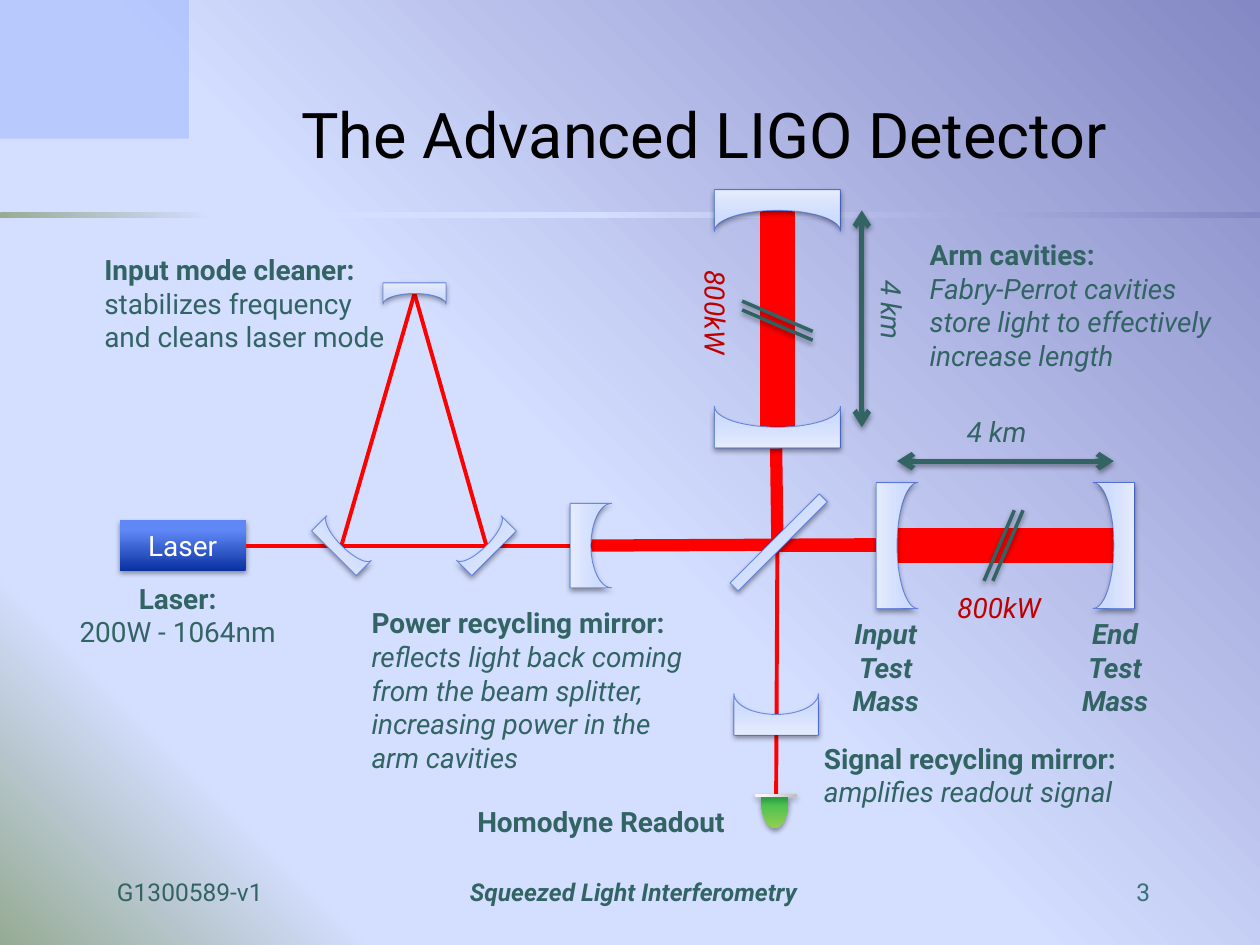
from dataclasses import dataclass
from math import cos, pi, sin

from lxml import etree
from pptx import Presentation
from pptx.dml.color import RGBColor
from pptx.enum.shapes import MSO_CONNECTOR, MSO_SHAPE
from pptx.enum.text import MSO_ANCHOR, MSO_AUTO_SIZE, PP_ALIGN
from pptx.oxml.ns import qn
from pptx.util import Inches, Pt

STRAIGHT = MSO_CONNECTOR.STRAIGHT
RECTANGLE, PIE = MSO_SHAPE.RECTANGLE, MSO_SHAPE.PIE
LEFT, CENTER = PP_ALIGN.LEFT, PP_ALIGN.CENTER
MIDDLE, BOTTOM = MSO_ANCHOR.MIDDLE, MSO_ANCHOR.BOTTOM
NO_AUTOFIT = MSO_AUTO_SIZE.NONE

COLUMNS, ROWS = 10, 7.5
CELL = Inches(1)
CAVITY = 1.72


@dataclass(frozen=True)
class Theme:
    font: str = "Roboto"
    title_size: float = 36
    body_size: float = 16
    footer_size: float = 14
    ink: str = "326464"
    number: str = "377373"
    black: str = "000000"
    white: str = "FFFFFF"
    power: str = "C00000"
    beam: str = "FF0000"
    corner: str = "7095FD"
    edge: str = "0337C6"
    backdrop: tuple = ((0, "8488C4"), (53, "D4DEFF"), (83, "D4DEFF"), (100, "96AB94"))
    glass: tuple = ((0, "CFDCFE"), (35, "CFDCFE"), (100, "E4EBFC"))
    laser: tuple = ((0, "0A31A1"), (80, "5F87F5"), (100, "5F87F5"))
    diode: tuple = ((0, "92D050"), (80, "00B050"), (100, "F8F8F8"))
    plate: tuple = ((0, "BEBEBE"), (80, "F7F7F7"), (100, "F8F8F8"))


THEME = Theme()


@dataclass(frozen=True)
class Box:
    left: float
    top: float
    width: float
    height: float

    def point(self, x, y):
        return self.left + x, self.top + y

    def area(self, x, y, width, height):
        return Box(self.left + x, self.top + y, width, height)

    def emu(self):
        return [round(v * CELL) for v in (self.left, self.top, self.width, self.height)]


def centered(point, width, height):
    return Box(point[0] - width / 2, point[1] - height / 2, width, height)


def child(parent, tag, **attributes):
    return etree.SubElement(parent, qn(tag), {k: str(v) for k, v in attributes.items()})


def set_alpha(element, percent):
    child(element.find(".//" + qn("a:srgbClr")), "a:alpha", val=percent * 1000)


def gradient(owner, fill, stops, angle=None):
    fill.gradient()
    grad = owner.find(".//" + qn("a:gradFill"))
    grad.clear()
    grad.set("rotWithShape", "1")
    stop_list = child(grad, "a:gsLst")
    for position, color in stops:
        child(child(stop_list, "a:gs", pos=position * 1000), "a:srgbClr", val=color)
    if angle is None:
        child(child(grad, "a:path", path="circle"), "a:fillToRect", l=100000, b=100000)
    else:
        child(grad, "a:lin", ang=angle * 60000, scaled=0)


def cast_shadow(effects, alpha=38, distance=1.6):
    shade = child(effects, "a:outerShdw", blurRad=Pt(3.1), dist=Pt(distance),
                  dir=90 * 60000, rotWithShape=0)
    child(child(shade, "a:srgbClr", val=THEME.black), "a:alpha", val=alpha * 1000)


def finish(shape, stops, angle=270, rotation=0, outlined=False, shadowed=True):
    gradient(shape._element, shape.fill, stops, angle)
    shape.rotation = rotation
    shape.shadow.inherit = False
    if shadowed:
        cast_shadow(shape._element.spPr.find(qn("a:effectLst")))
    if outlined:
        shape.line.color.rgb = RGBColor.from_string(THEME.edge)
        shape.line.width = Pt(0.5)
        set_alpha(shape._element.spPr.find(qn("a:ln")), 50)
    else:
        shape.line.fill.background()
    return shape


def block(page, box, stops, kind=RECTANGLE, **look):
    return finish(page.shapes.add_shape(kind, *box.emu()), stops, **look)


def mirror(page, vertex, width, height, rotation=0):
    box = centered(vertex, width, height)
    arc = [(0.5 - cos(pi * i / 24) / 2, 1 - sin(pi * i / 24) / 2) for i in range(25)]
    outline = [(round((box.left + x * width) * CELL), round((box.top + y * height) * CELL))
               for x, y in [(0, 0), *arc, (1, 0)]]
    builder = page.shapes.build_freeform(*outline[0])
    builder.add_line_segments(outline[1:], close=True)
    return finish(builder.convert_to_shape(), THEME.glass, rotation=rotation, outlined=True)


def line(page, start, end, width, color=THEME.beam, arrows=False, shadowed=False):
    ends = [round(v * CELL) for v in (*start, *end)]
    connector = page.shapes.add_connector(STRAIGHT, *ends)
    connector.line.color.rgb = RGBColor.from_string(color)
    connector.line.width = Pt(width)
    properties = connector._element.spPr
    if arrows:
        for tag in ("a:headEnd", "a:tailEnd"):
            child(properties.find(qn("a:ln")), tag, type="arrow")
    effects = child(properties, "a:effectLst")
    if shadowed:
        cast_shadow(effects)
    return connector


def style(span, size=THEME.body_size, color=THEME.ink, bold=False, italic=False):
    span.font.name, span.font.size = THEME.font, Pt(size)
    span.font.color.rgb = RGBColor.from_string(color)
    span.font.bold, span.font.italic = bold, italic


def label(page, box, paragraphs, align=LEFT, wrap=True, rotation=0, **look):
    shape = page.shapes.add_textbox(*box.emu())
    shape.rotation = rotation
    frame = shape.text_frame
    frame.word_wrap, frame.vertical_anchor = wrap, MIDDLE
    for index, spans in enumerate(paragraphs):
        para = frame.add_paragraph() if index else frame.paragraphs[0]
        para.alignment = align
        for text, emphasis in spans:
            span = para.add_run()
            span.text = text
            style(span, bold="b" in emphasis, italic="i" in emphasis, **look)
    return shape


def header(page, box):
    stripe = box.area(0, 1.69, box.width, 0.04)
    block(page, stripe, THEME.backdrop, angle=None, shadowed=False)
    corner = page.shapes.add_shape(RECTANGLE, *box.area(0, 0, 1.5, 1.1).emu())
    corner.fill.solid()
    corner.fill.fore_color.rgb = RGBColor.from_string(THEME.corner)
    set_alpha(corner._element.spPr, 28)
    corner.line.fill.background()
    corner.shadow.inherit = False
    title = page.shapes.title
    title.left, title.top, title.width, title.height = box.area(1.84, 0.57, 7.5, 0.84).emu()
    frame = title.text_frame
    frame.text = "The Advanced LIGO Detector"
    frame.vertical_anchor, frame.auto_size = BOTTOM, NO_AUTOFIT
    frame.paragraphs[0].alignment = CENTER
    style(frame.paragraphs[0].runs[0], THEME.title_size, THEME.black)


def footer(page, box):
    shape = label(page, box, [[("G1300589-v1\t", ""), ("Squeezed Light Interferometry\t", "bi"),
                               ("3", "")]], size=THEME.footer_size)
    para = shape.text_frame.paragraphs[0]
    tabs = child(para._p.get_or_add_pPr(), "a:tabLst")
    for position, align in ((4.1, "ctr"), (8.2, "r")):
        child(tabs, "a:tab", pos=Inches(position), algn=align)
    para.runs[-1].font.color.rgb = RGBColor.from_string(THEME.number)


def laser_source(page, box):
    laser = block(page, box.area(0.45, 2.18, 1, 0.4), THEME.laser)
    laser.text_frame.text = "Laser"
    laser.text_frame.vertical_anchor = MIDDLE
    laser.text_frame.paragraphs[0].alignment = CENTER
    style(laser.text_frame.paragraphs[0].runs[0], color=THEME.white)
    main_beam = line(page, box.point(1.45, 2.38), box.point(8.34, 2.38), 2.25)
    main_beam.begin_connect(laser, 3)
    apex = box.point(2.79, 0.38)
    feet = [box.point(2.79 + shift, 2.38) for shift in (-0.58, 0.57)]
    for foot in feet:
        line(page, apex, foot, 2.25)
    for vertex, rotation in zip((apex, *feet), (0, 225, 135)):
        mirror(page, vertex, 0.5, 0.17, rotation)
    label(page, box.area(0.01, 2.61, 1.8, 0.64), [[("Laser:", "b")], [("200W - 1064nm", "")]],
          align=CENTER, wrap=False)
    label(page, box.area(0.23, 0, 2.46, 0.91),
          [[("Input mode cleaner:", "b")], [("stabilizes frequency", "")],
           [("and cleans laser mode", "")]], wrap=False)


def power_recycling(page, box):
    vertex = box.point(1.84, 0.33)
    line(page, vertex, box.point(4.1, 0.32), 7)
    mirror(page, vertex, 0.67, 0.33, 270)
    label(page, box.area(0, 0.75, 2.79, 1.45),
          [[("Power recycling mirror: ", "b"),
            ("reflects light back coming from the beam splitter, "
             "increasing power in the arm cavities", "i")]])


def readout(page, box):
    line(page, box.point(0.33, -1.17), box.point(0.32, 0.81), 2.25)
    diode = block(page, centered(box.point(0.31, 0.83), 0.49, 0.22), THEME.diode, PIE,
                  angle=0, rotation=270)
    diode.adjustments[0], diode.adjustments[1] = 53.411, 162
    block(page, centered(box.point(0.32, 0.815), 0.02, 0.33), THEME.plate, rotation=270)
    block(page, centered(box.point(0.34, -1.195), 1, 0.09), THEME.glass,
          rotation=135, outlined=True)
    mirror(page, box.point(0.32, 0.17), 0.67, 0.33, 180)
    label(page, box.area(-2.32, 0.83, 2.5, 0.37), [[("Homodyne Readout", "b")]], align=CENTER)
    label(page, box.area(0.6, 0.33, 2.79, 0.64),
          [[("Signal recycling mirror: ", "b"), ("amplifies readout signal", "i")]])


def arm(page, box, upright):
    middle = box.point(box.width / 2, box.height / 2)
    side = -1 if upright else 1
    far_angle, text_angle = (0, 90) if upright else (90, 0)

    def at(along, across):
        x, y = (-across, -along) if upright else (along, -across)
        return middle[0] + x, middle[1] + y

    near, far = -CAVITY / 2, CAVITY / 2
    line(page, at(near, 0), at(far, 0), 20)
    mirror(page, at(near, 0), 1, 0.33, far_angle + 180)
    mirror(page, at(far, 0), 1, 0.33, far_angle)
    line(page, at(near, 0.67 * side), at(far, 0.67 * side), 3, THEME.ink, True, True)
    for text, along, across, color in (("4 km", -0.07, 0.91, THEME.ink),
                                       ("800kW", -0.05, -0.49, THEME.power)):
        label(page, centered(at(along * side, across * side), 1, 1), [[(text, "i")]],
              align=CENTER, wrap=False, rotation=text_angle, color=color)
    for shift in (0, 0.07):
        line(page, at(0.07 + shift, 0.28), at(shift - 0.17, -0.28), 2, THEME.ink, shadowed=True)


def arm_labels(page, box):
    label(page, box.area(0.63, 0, 2.47, 1.18),
          [[("Arm cavities:", "b")],
           [("Fabry-Perrot cavities store light to effectively increase length", "i")]])
    for column, name in ((0, "Input"), (1.82, "End")):
        label(page, box.area(column, 3.01, 0.76, 0.91),
              [[(word, "bi")] for word in (name, "Test", "Mass")], align=CENTER, wrap=False)


def main():
    deck = Presentation()
    deck.slide_width, deck.slide_height = round(COLUMNS * CELL), round(ROWS * CELL)
    page = deck.slides.add_slide(deck.slide_layouts[5])
    gradient(page._element, page.background.fill, THEME.backdrop, 135)
    header(page, Box(0, 0, COLUMNS, 1.73))
    line(page, (6.16, 3.56), (6.17, 4.32), 7)
    line(page, (6.17, 4.33), (6.95, 4.33), 7)
    laser_source(page, Box(0.5, 1.95, 3.6, 3.25))
    power_recycling(page, Box(2.85, 4, 2.79, 2.2))
    readout(page, Box(5.84, 5.5, 3.39, 1.2))
    arm(page, Box(5.67, 1.67, 1, CAVITY), upright=True)
    arm(page, Box(7.12, 3.83, CAVITY, 1), upright=False)
    arm_labels(page, Box(6.65, 1.83, 3.1, 3.92))
    footer(page, Box(0.83, 6.91, 8.42, 0.34))
    deck.save("out.pptx")


if __name__ == "__main__":
    main()
